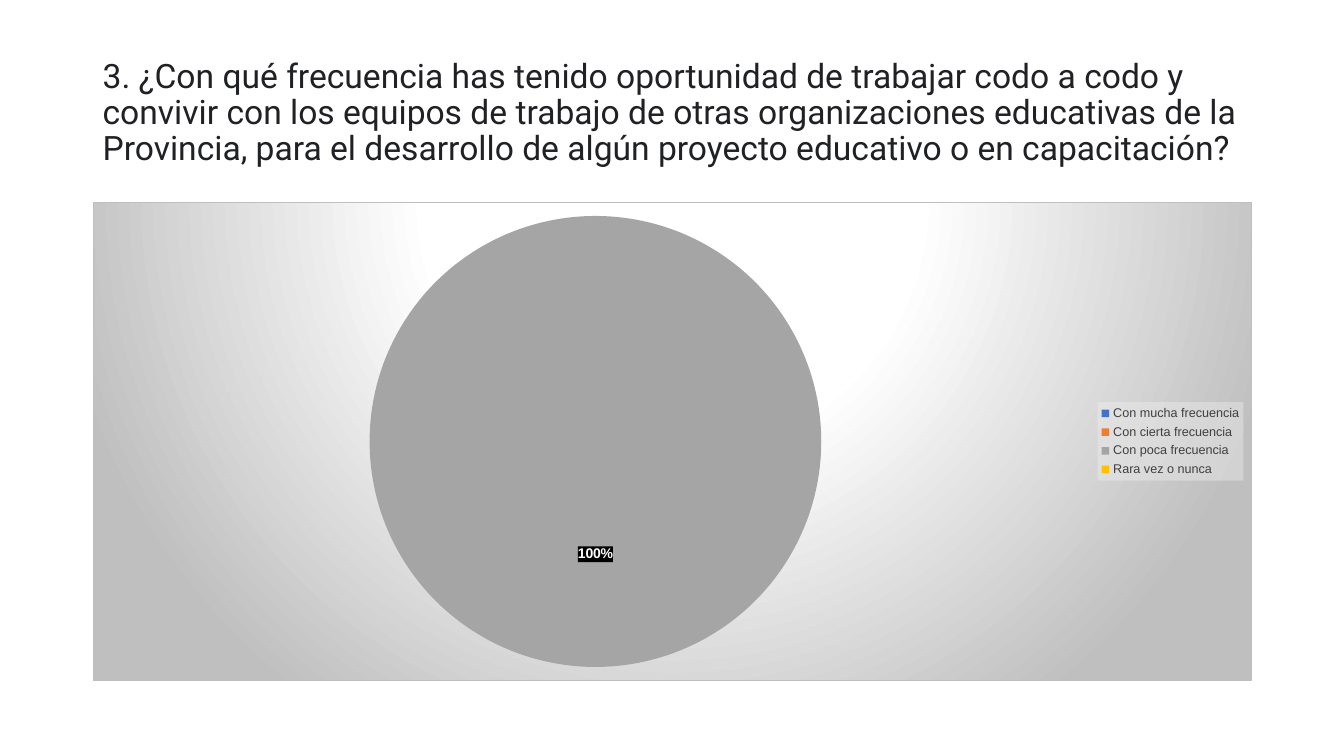
"""Build a survey slide: one question and a pie chart of its answers."""
from dataclasses import dataclass

from pptx import Presentation
from pptx.chart.data import CategoryChartData
from pptx.dml.color import RGBColor
from pptx.enum.chart import XL_CHART_TYPE, XL_LABEL_POSITION, XL_LEGEND_POSITION
from pptx.enum.text import MSO_ANCHOR
from pptx.oxml import parse_xml
from pptx.oxml.ns import nsdecls, qn
from pptx.util import Inches, Pt

PIE = XL_CHART_TYPE.PIE
LABEL_CENTER = XL_LABEL_POSITION.CENTER
LEGEND_RIGHT = XL_LEGEND_POSITION.RIGHT
MIDDLE = MSO_ANCHOR.MIDDLE


@dataclass(frozen=True)
class Theme:
    question_font: str = "Roboto"
    chart_font: str = "Arial"
    question_size: int = 24
    label_size: int = 10
    legend_size: int = 9
    question: str = "202124"
    chart_text: str = "000000"
    legend_text: str = "404040"
    legend_back: str = "F2F2F2"
    label_text: str = "FFFFFF"
    label_back: str = "000000"
    panel_light: str = "FFFFFF"
    panel_dark: str = "BFBFBF"
    slices: tuple = ("4472C4", "ED7D31", "A5A5A5", "FFC000")


theme = Theme()


def style_font(font, name, size, color, bold=False):
    font.name, font.size, font.bold = name, Pt(size), bold
    font.color.rgb = RGBColor.from_string(color)


def add_text(text, left, top, width, height, **font_format):
    box = slide.shapes.add_textbox(Inches(left), Inches(top), Inches(width), Inches(height))
    frame = box.text_frame
    frame.word_wrap = True
    frame.vertical_anchor = MIDDLE
    paragraph = frame.paragraphs[0]
    paragraph.line_spacing = 0.9
    run = paragraph.add_run()
    run.text = text
    style_font(run.font, **font_format)


deck = Presentation()
deck.slide_width, deck.slide_height = Inches(13.33), Inches(7.5)
slide = deck.slides.add_slide(deck.slide_layouts[6])

add_text(
    "3. ¿Con qué frecuencia has tenido oportunidad de trabajar codo a codo y convivir con "
    "los equipos de trabajo de otras organizaciones educativas de la Provincia, para el "
    "desarrollo de algún proyecto educativo o en capacitación?",
    0.92, 0.4, 11.5, 1.45,
    name=theme.question_font, size=theme.question_size, color=theme.question,
)

answers = {
    "Con mucha frecuencia": 0,
    "Con cierta frecuencia": 0,
    "Con poca frecuencia": 100,
    "Rara vez o nunca": 0,
}
survey = CategoryChartData()
survey.categories = list(answers)
survey.add_series("Series 1", list(answers.values()))
chart = slide.shapes.add_chart(
    PIE, Inches(0.92), Inches(2), Inches(11.5), Inches(4.76), survey
).chart
chart.has_title = False
style_font(chart.font, theme.chart_font, theme.label_size, theme.chart_text)

chart.has_legend = True
legend = chart.legend
legend.position = LEGEND_RIGHT
legend.include_in_layout = False
style_font(legend.font, theme.chart_font, theme.legend_size, theme.legend_text)

pie = chart.plots[0]
pie.vary_by_categories = True
frequency = pie.series[0]
for index, color in enumerate(theme.slices):
    slice_fill = frequency.points[index].format.fill
    slice_fill.solid()
    slice_fill.fore_color.rgb = RGBColor.from_string(color)

percents = frequency.data_labels
percents.show_value = False
percents.show_percentage = True
percents.number_format = "0%"
percents.number_format_is_linked = False
percents.position = LABEL_CENTER
style_font(percents.font, theme.chart_font, theme.label_size, theme.label_text, bold=True)
percents_xml = frequency._element.find(qn("c:dLbls"))
empty_slices = [index for index, value in enumerate(answers.values()) if value == 0]
for place, index in enumerate(empty_slices):
    percents_xml.insert(place, parse_xml(
        f'<c:dLbl {nsdecls("c")}><c:idx val="{index}"/><c:delete val="1"/></c:dLbl>'
    ))

panel_fill = f"""<a:gradFill>
  <a:gsLst>
    <a:gs pos="0"><a:srgbClr val="{theme.panel_light}"/></a:gs>
    <a:gs pos="39000"><a:srgbClr val="{theme.panel_light}"/></a:gs>
    <a:gs pos="100000"><a:srgbClr val="{theme.panel_dark}"/></a:gs>
  </a:gsLst>
  <a:path path="circle"><a:fillToRect l="50000" t="-80000" r="50000" b="180000"/></a:path>
</a:gradFill>
<a:ln w="9525"><a:solidFill><a:srgbClr val="{theme.panel_dark}"/></a:solidFill></a:ln>"""
tint = '<a:solidFill><a:srgbClr val="{}"><a:alpha val="{}"/></a:srgbClr></a:solidFill>'
backgrounds = [
    (chart._chartSpace, panel_fill),
    (legend._element, tint.format(theme.legend_back, 39000)),
    (percents_xml, tint.format(theme.label_back, 60000)),
]
for part, fill_xml in backgrounds:
    part.find(qn("c:txPr")).addprevious(
        parse_xml(f'<c:spPr {nsdecls("c", "a")}>{fill_xml}</c:spPr>')
    )

deck.save("out.pptx")
